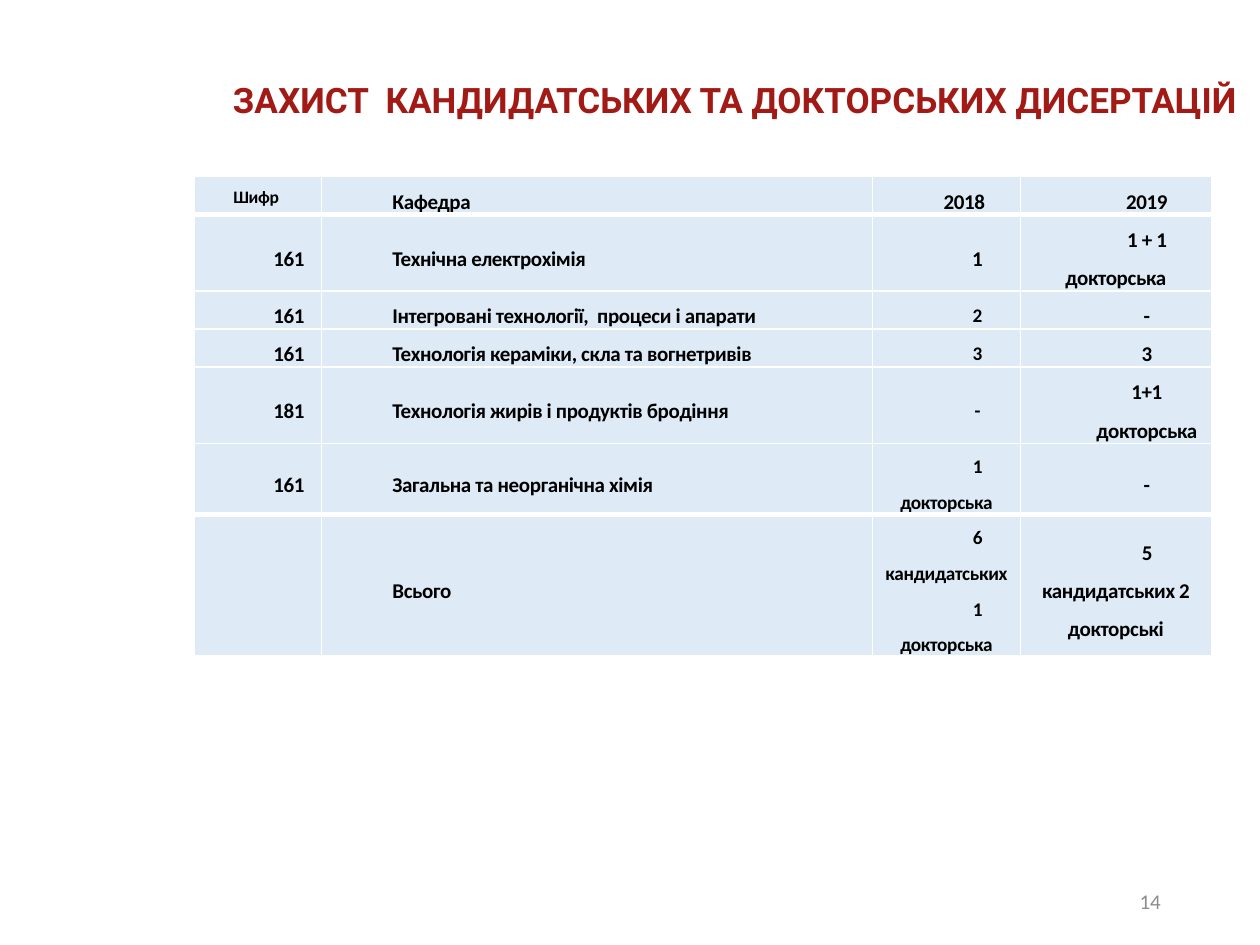
from dataclasses import dataclass

from lxml import etree
from pptx import Presentation
from pptx.dml.color import RGBColor
from pptx.enum import text
from pptx.oxml import ns
from pptx.util import Cm, Pt

LEFT, MID, RIGHT, JUST = (
    text.PP_ALIGN.LEFT, text.PP_ALIGN.CENTER,
    text.PP_ALIGN.RIGHT, text.PP_ALIGN.JUSTIFY,
)


@dataclass(frozen=True)
class Theme:
    title: str = "A11A16"
    ink: str = "000000"
    page: str = "8C8C8C"
    fill: str = "DEEBF7"
    line: str = "FFFFFF"
    head: str = "Roboto"
    body: str = "Calibri"
    large: int = 20
    base: int = 12
    small: int = 11
    tiny: int = 10
    thin: int = 1
    thick: int = 3


THEME = Theme()
COLS = (2.56, 11.11, 2.98, 3.85)
ROWS = (0.76, 1.54, 0.77, 0.77, 1.54, 1.43, 2.84)
DATA = (
    ("Шифр ", "Кафедра", "2018", "2019"),
    ("161", "Технічна електрохімія", "1", "1 + 1 докторська"),
    ("161", "Інтегровані технології,  процеси і апарати", "2", "-"),
    ("161", "Технологія кераміки, скла та вогнетривів", "3", "3"),
    ("181", "Технологія жирів і продуктів бродіння", "-", "1+1\nдокторська"),
    ("161", "Загальна та неорганічна хімія", "1 докторська", "-"),
    ("", "Всього", "6 кандидатських\n1 докторська",
     "5 кандидатських 2 докторські"),
)


def style(par, size, color, name, bold=False):
    font = par.font
    font.size, font.name, font.bold = Pt(size), name, bold
    font.color.rgb = RGBColor.from_string(color)


def add_text(slide, box, words, align, size, color, name, bold=False):
    frame = slide.shapes.add_textbox(*map(Cm, box)).text_frame
    frame.word_wrap = True
    frame.vertical_anchor = text.MSO_ANCHOR.MIDDLE
    frame.text = words
    par = frame.paragraphs[0]
    par.alignment = align
    style(par, size, color, name, bold)
    return par


def add_line(cell, side, width):
    props = cell._tc.get_or_add_tcPr()
    line = etree.SubElement(props, ns.qn(f"a:ln{side}"), w=str(Pt(width)))
    fill = etree.SubElement(line, ns.qn("a:solidFill"))
    etree.SubElement(fill, ns.qn("a:srgbClr"), val=THEME.line)


def set_lines(cell, row):
    last = len(DATA) - 1
    thick = {"T": row in (1, last), "B": row in (0, last - 1)}
    for side in "LRTB":
        add_line(cell, side, THEME.thick if thick.get(side) else THEME.thin)


def get_align(row, col):
    if col == 1:
        return JUST if row in (0, 4) else LEFT
    return JUST if (row, col) == (0, 2) else MID


def get_size(row, col):
    if (row, col) == (0, 0):
        return THEME.tiny
    return THEME.small if col == 2 and row > 1 else THEME.base


def fill_cell(cell, row, col, words):
    first = (row, col) == (0, 0)
    set_lines(cell, row)
    cell.fill.solid()
    cell.fill.fore_color.rgb = RGBColor.from_string(THEME.fill)
    cell.margin_left = cell.margin_right = Cm(0.18)
    cell.margin_top = cell.margin_bottom = 0
    cell.vertical_anchor = (
        text.MSO_ANCHOR.TOP if first else text.MSO_ANCHOR.MIDDLE)
    cell.text = words
    for par in cell.text_frame.paragraphs:
        par.alignment = get_align(row, col)
        par.line_spacing = 1.5
        style(par, get_size(row, col), THEME.ink, THEME.body, True)
        props = par._p.get_or_add_pPr()
        props.set("indent", str(0 if first else Cm(1.25)))
        props.find(ns.qn("a:defRPr")).set("spc", "-20")


def add_grid(slide):
    box = map(Cm, (3.92, 3.56, sum(COLS), sum(ROWS)))
    table = slide.shapes.add_table(len(ROWS), len(COLS), *box).table
    for col, width in zip(table.columns, COLS):
        col.width = Cm(width)
    for row, height in zip(table.rows, ROWS):
        row.height = Cm(height)
    for row, line in enumerate(DATA):
        for col, words in enumerate(line):
            fill_cell(table.cell(row, col), row, col, words)


def main():
    deck = Presentation()
    deck.slide_width, deck.slide_height = Cm(25.4), Cm(19.05)
    slide = deck.slides.add_slide(deck.slide_layouts[6])
    title = add_text(
        slide, (4.23, 0, 21.17, 4.13),
        "ЗАХИСТ  КАНДИДАТСЬКИХ ТА ДОКТОРСЬКИХ ДИСЕРТАЦІЙ",
        MID, THEME.large, THEME.title, THEME.head, True)
    title.line_spacing = 0.9
    add_grid(slide)
    add_text(slide, (17.94, 17.66, 5.71, 1.01), "14",
             RIGHT, THEME.base, THEME.page, THEME.body)
    deck.save("out.pptx")


if __name__ == "__main__":
    main()
